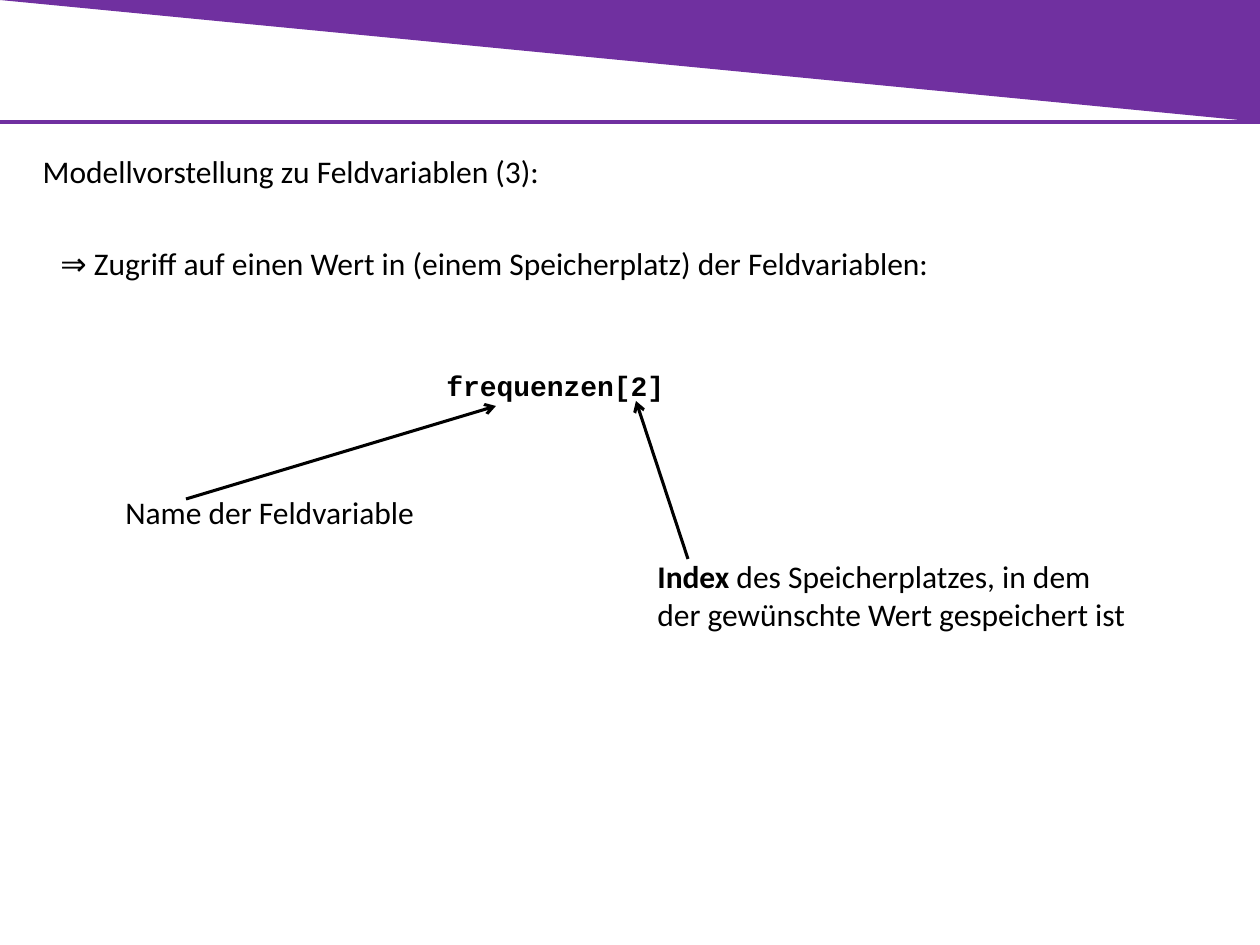
from pptx import Presentation
from pptx.dml.color import RGBColor
from pptx.enum.shapes import MSO_CONNECTOR as Connector, MSO_SHAPE as Preset
from pptx.enum.text import MSO_ANCHOR as Anchor, MSO_AUTO_SIZE as AutoSize, PP_ALIGN as Align
from pptx.oxml.ns import qn
from pptx.util import Pt
from lxml.etree import SubElement

COLORS = {"band": "7030A0", "ink": "000000"}
EMU_PER_PX = 914400 / 126
BODY = {"name": "Calibri", "size": Pt(18), "bold": False}
STRONG = {**BODY, "bold": True}
CODE = {"name": "Courier New", "size": Pt(16), "bold": True}
FRAME = {"word_wrap": True, "auto_size": AutoSize.NONE, "vertical_anchor": Anchor.TOP}


def px(length):
    return round(length * EMU_PER_PX)


def color(key):
    return RGBColor.from_string(COLORS[key])


def apply(target, values):
    for attribute, value in values.items():
        setattr(target, attribute, value)


class SlideBuilder:
    def __init__(self, slide):
        self.slide = slide
        self.shapes = slide.shapes

    def fill_text(self, frame, parts, indent=0):
        apply(frame, FRAME)
        paragraph = frame.paragraphs[0]
        paragraph.alignment = Align.LEFT
        if indent:
            paragraph._p.get_or_add_pPr().set("marL", str(px(indent)))
        for wording, style in parts:
            run = paragraph.add_run()
            run.text = wording
            apply(run.font, style)
            run.font.color.rgb = color("ink")

    def title(self, box, wording):
        heading = self.shapes.title
        apply(heading, dict(zip(("left", "top", "width", "height"), map(px, box))))
        self.fill_text(heading.text_frame, [(wording, BODY)])

    def text(self, box, *parts, indent=0):
        label = self.shapes.add_textbox(*map(px, box))
        self.fill_text(label.text_frame, parts, indent)

    def wedge(self, box):
        band = self.shapes.add_shape(Preset.RIGHT_TRIANGLE, *map(px, box))
        band.rotation = 180
        band.shadow.inherit = False
        band.fill.solid()
        band.fill.fore_color.rgb = color("band")
        band.line.fill.background()

    def line(self, ends, key, weight, arrow=False):
        connector = self.shapes.add_connector(Connector.STRAIGHT, *map(px, ends))
        connector.line.color.rgb = color(key)
        connector.line.width = Pt(weight)
        if arrow:
            SubElement(connector.line._get_or_add_ln(), qn("a:tailEnd"), type="arrow")
        SubElement(connector._element.spPr, qn("a:effectLst"))


def main():
    deck = Presentation()
    apply(deck, {"slide_width": px(1260), "slide_height": px(945)})
    page = SlideBuilder(deck.slides.add_slide(deck.slide_layouts[5]))

    page.wedge((0, 0, 1260, 122))
    page.line((0, 122, 1260, 122), "band", 2.25)

    page.title((30, 146, 539, 50), "Modellvorstellung zu Feldvariablen (3):")
    page.text((48, 238, 1119, 50),
              ("⇒ Zugriff auf einen Wert in (einem Speicherplatz) der Feldvariablen:", BODY))
    page.text((367, 362, 325, 47), ("frequenzen[2]", CODE), indent=67)
    page.text((113, 487, 325, 50), ("Name der Feldvariable", BODY))
    page.text((645, 551, 498, 89), ("Index", STRONG),
              (" des Speicherplatzes, in dem der gewünschte Wert gespeichert ist", BODY))

    for pointer in ((186, 499, 496, 406), (688, 559, 636, 401)):
        page.line(pointer, "ink", 1.75, arrow=True)

    deck.save("out.pptx")


if __name__ == "__main__":
    main()
